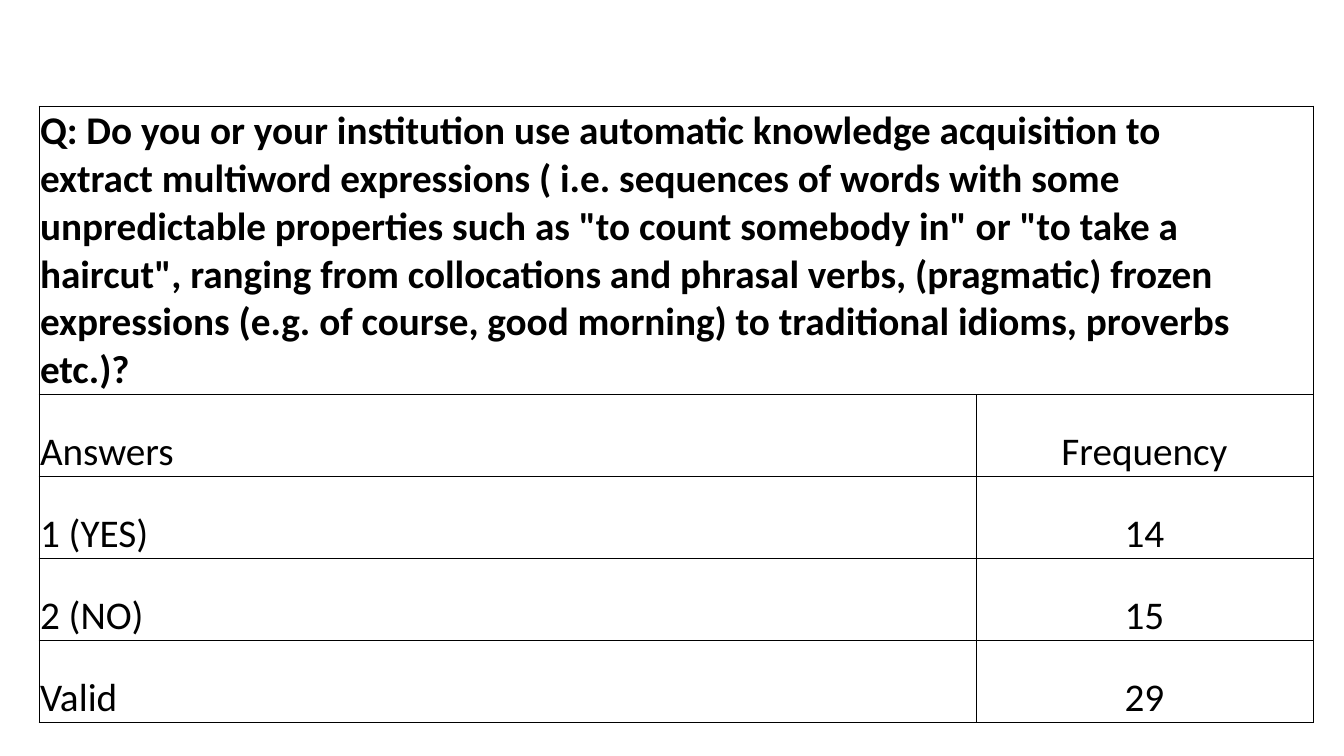
from lxml import etree
from pptx import Presentation
from pptx import util as u
from pptx.dml.color import RGBColor
from pptx.enum import text
from pptx.oxml import ns

BLACK = RGBColor(0x00, 0x00, 0x00)
EMU_PER_PX = 914400 / 100.8
HARD_SPACE = chr(160)

QUESTION = (
    "Q: Do you or your institution use automatic knowledge acquisition to "
    f"extract{HARD_SPACE}multiword expressions ( i.e. sequences of words with some "
    'unpredictable properties such as "to count somebody in" or "to take a '
    'haircut", ranging from collocations and phrasal verbs, (pragmatic) frozen '
    "expressions (e.g. of course, good morning) to traditional idioms, proverbs "
    f"etc.)?{HARD_SPACE}"
)
ANSWERS = [
    ("Answers", "Frequency"),
    ("1 (YES)", "14"),
    ("2 (NO)", "15"),
    ("Valid", "29"),
]


def px(length):
    return u.Emu(round(length * EMU_PER_PX))


def write(frame, content, font="Calibri", size=28, color=BLACK, bold=False,
          align=text.PP_ALIGN.LEFT):
    paragraph = frame.paragraphs[0]
    paragraph.alignment = align
    run = paragraph.add_run()
    run.text = content
    run.font.name = font
    run.font.size = u.Pt(size)
    run.font.bold = bold
    run.font.color.rgb = color


class SurveySlide:
    def __init__(self, presentation, border_color=BLACK, border_width=0.5):
        self.slide = presentation.slides.add_slide(presentation.slide_layouts[6])
        self.border_color = border_color
        self.border_width = border_width

    def border(self, cell):
        properties = cell._tc.get_or_add_tcPr()
        for index, side in enumerate(("a:lnL", "a:lnR", "a:lnT", "a:lnB")):
            line = etree.Element(ns.qn(side), w=str(u.Pt(self.border_width)))
            fill = etree.SubElement(line, ns.qn("a:solidFill"))
            etree.SubElement(fill, ns.qn("a:srgbClr"), val=str(self.border_color))
            properties.insert(index, line)

    def cell(self, cell, content, **style):
        cell.vertical_anchor = text.MSO_ANCHOR.BOTTOM
        cell.margin_left = cell.margin_right = cell.margin_top = px(1)
        cell.margin_bottom = 0
        cell.fill.background()
        self.border(cell)
        if content:
            write(cell.text_frame, content, **style)

    def table(self, left, top, widths, heights, rows):
        frame = self.slide.shapes.add_table(
            len(heights), len(widths), px(left), px(top),
            px(sum(widths)), px(sum(heights)))
        table = frame.table
        table.first_row = table.horz_banding = False
        for column, width in zip(table.columns, widths):
            column.width = px(width)
        for row, height in zip(table.rows, heights):
            row.height = px(height)
        table.cell(0, 0).merge(table.cell(0, len(widths) - 1))
        for row_index, row in enumerate(rows):
            for column_index, content in enumerate(row):
                align = text.PP_ALIGN.CENTER if column_index else text.PP_ALIGN.LEFT
                self.cell(table.cell(row_index, column_index), content,
                          bold=row_index == 0, align=align)


def main():
    presentation = Presentation()
    presentation.slide_width = px(1344)
    presentation.slide_height = px(756)
    survey = SurveySlide(presentation)
    survey.table(39, 106, widths=[937, 337], heights=[278] + [82] * len(ANSWERS),
                 rows=[(QUESTION, "")] + ANSWERS)
    presentation.save("out.pptx")


if __name__ == "__main__":
    main()
